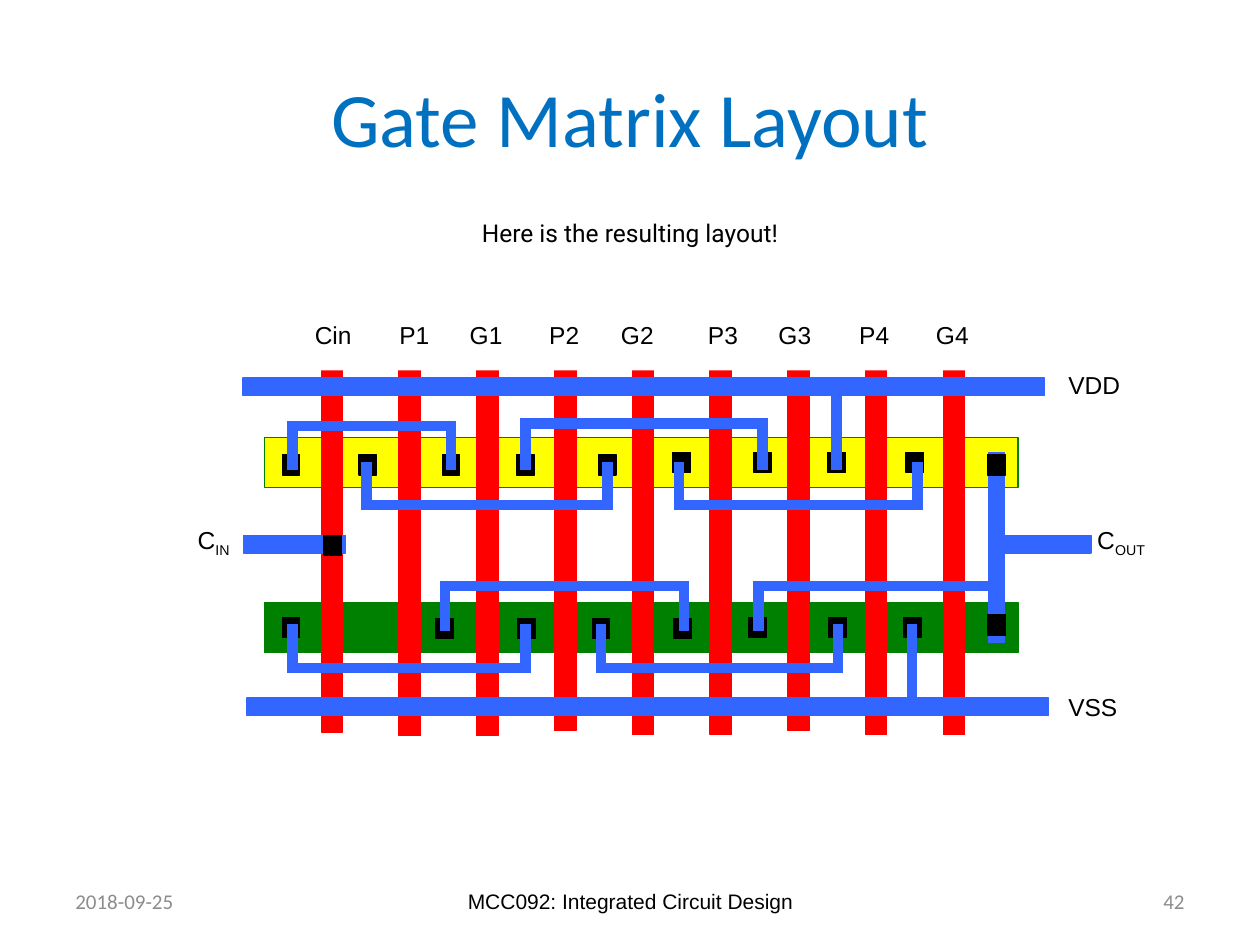
from lxml import etree
from pptx import Presentation
from pptx.dml.color import RGBColor
from pptx.enum import shapes, text
from pptx.oxml import ns
from pptx.util import Inches, Pt

BLACK = RGBColor(0x00, 0x00, 0x00)
WHITE = RGBColor(0xFF, 0xFF, 0xFF)
TITLE_BLUE = RGBColor(0x00, 0x70, 0xC0)
FOOTER_GREY = RGBColor(0x8C, 0x8C, 0x8C)
METAL_BLUE = RGBColor(0x33, 0x66, 0xFF)
POLY_RED = RGBColor(0xFF, 0x00, 0x00)
P_YELLOW = RGBColor(0xFF, 0xFF, 0x00)
N_GREEN = RGBColor(0x00, 0x80, 0x00)

LEFT, CENTER, RIGHT = (text.PP_ALIGN.LEFT, text.PP_ALIGN.CENTER,
                       text.PP_ALIGN.RIGHT)
TOP, MIDDLE = text.MSO_ANCHOR.TOP, text.MSO_ANCHOR.MIDDLE

# All circuit lengths are inches from the circuit's own top left corner.
GATE_NAMES = ["Cin", "P1", "G1", "P2", "G2", "P3", "G3", "P4", "G4"]
GATE_LEFT, GATE_PITCH = 1.05, 0.617
GATE_TOPS = [0.36, 0.39, 0.39, 0.35, 0.38, 0.38, 0.35, 0.38, 0.38]
NAME_TABS = [0.79, 1.36, 1.98, 2.56, 3.24, 3.81, 4.44, 5.06]
CONTACT_ROWS = [  # top, lefts
    (1.11, [0.74, 1.35, 2.01, 2.6, 3.25, 6.34]),
    (1.09, [3.84, 4.48, 5.07, 5.69]),
    (1.75, [1.07]),
    (2.4, [0.74, 4.44, 5.08, 5.67]),
    (2.41, [1.96, 2.61, 3.2, 3.85]),
    (2.38, [6.34]),
]
BRIDGES = [  # bar y, contact y, left and right end of each bar
    (0.88, 1.23, [(0.82, 2.08)]),
    (0.86, 1.23, [(2.67, 4.55)]),
    (1.51, 1.17, [(1.41, 3.32), (3.89, 5.78)]),
    (2.15, 2.51, [(2.03, 3.93), (4.52, 6.36)]),
    (2.8, 2.45, [(0.82, 2.67), (3.27, 5.15)]),
]
COUT_JOIN = 6.36
SUPPLY_TAPS = [(5.14, 0.63, 1.23), (5.74, 3.05, 2.45)]
HALF_WIRE = 0.04


def add_text(slide, box, content, size, font="Arial", color=BLACK, align=LEFT,
             anchor=TOP, subscript="", fill=None):
    shape = slide.shapes.add_textbox(*map(Inches, box))
    if fill is not None:
        shape.fill.solid()
        shape.fill.fore_color.rgb = fill
    frame = shape.text_frame
    frame.word_wrap = True
    frame.vertical_anchor = anchor
    paragraph = frame.paragraphs[0]
    paragraph.text = content
    paragraph.alignment = align
    if subscript:
        run = paragraph.add_run()
        run.text = subscript
        run.font._element.set("baseline", "-25000")
    for run in paragraph.runs:
        run.font.size = Pt(size)
        run.font.name = font
        run.font.color.rgb = color
    return paragraph


def add_center_tabs(paragraph, positions):
    tabs = etree.SubElement(paragraph._p.get_or_add_pPr(), ns.qn("a:tabLst"))
    for position in positions:
        etree.SubElement(tabs, ns.qn("a:tab"), pos=str(Inches(position)),
                         algn="ctr")


def add_block(slide, origin, box, fill, outline=None):
    left, top, width, height = box
    shape = slide.shapes.add_shape(
        shapes.MSO_SHAPE.RECTANGLE, Inches(origin[0] + left),
        Inches(origin[1] + top), Inches(width), Inches(height))
    shape.shadow.inherit = False
    shape.fill.solid()
    shape.fill.fore_color.rgb = fill
    shape.line.color.rgb = fill if outline is None else outline
    shape.line.width = Pt(0.75)


def add_wire(slide, origin, start, end):
    wire = slide.shapes.add_connector(
        shapes.MSO_CONNECTOR.STRAIGHT,
        Inches(origin[0] + start[0]), Inches(origin[1] + start[1]),
        Inches(origin[0] + end[0]), Inches(origin[1] + end[1]))
    wire.line.color.rgb = METAL_BLUE
    wire.line.width = Pt(6)
    etree.SubElement(wire._element.spPr, ns.qn("a:effectLst"))


def add_bridge(slide, origin, bar_y, contact_y, ends):
    """A bar with a leg down or up to a contact at each end."""
    outer_y = bar_y + (HALF_WIRE if contact_y < bar_y else -HALF_WIRE)
    for x in ends:
        if x != COUT_JOIN:
            add_wire(slide, origin, (x, outer_y), (x, contact_y))
    add_wire(slide, origin, (ends[0] - HALF_WIRE, bar_y),
             (ends[1] + HALF_WIRE, bar_y))


def add_labels(slide, origin):
    left, top = origin
    names = add_text(slide, (left + 0.9, top - 0.01, 6.54, 0.45),
                     "\t".join(GATE_NAMES), 14, fill=WHITE)
    add_center_tabs(names, NAME_TABS)
    for x, y, content, subscript in [(7.11, 1.62, "C", "OUT"),
                                     (6.88, 0.39, "VDD", ""),
                                     (6.88, 2.94, "VSS", ""),
                                     (-0.03, 1.62, "C", "IN")]:
        add_text(slide, (left + x, top + y, 0.79, 0.45), content, 14,
                 subscript=subscript)


def add_circuit(slide, origin):
    add_block(slide, origin, (0.6, 0.97, 5.98, 0.4), P_YELLOW, N_GREEN)
    add_block(slide, origin, (0.6, 2.28, 5.98, 0.4), N_GREEN)
    for index, top in enumerate(GATE_TOPS):
        gate_left = GATE_LEFT + index * GATE_PITCH
        add_block(slide, origin, (gate_left, top, 0.17, 2.95), POLY_RED)
    add_labels(slide, origin)
    for metal in [(0.43, 0.5, 6.36, 0.14), (0.46, 3.04, 6.36, 0.14),
                  (0.43, 1.75, 0.81, 0.14), (6.35, 1.75, 0.81, 0.14),
                  (6.35, 1.09, 0.12, 1.51)]:
        add_block(slide, origin, metal, METAL_BLUE)
    for top, lefts in CONTACT_ROWS:
        for left in lefts:
            add_block(slide, origin, (left, top, 0.14, 0.16), BLACK)
    for bar_y, contact_y, bars in BRIDGES:
        for ends in bars:
            add_bridge(slide, origin, bar_y, contact_y, ends)
    for x, rail_y, contact_y in SUPPLY_TAPS:
        add_wire(slide, origin, (x, rail_y), (x, contact_y))


def add_title(slide, box):
    title = slide.shapes.title
    title.left, title.top, title.width, title.height = map(Inches, box)
    title.text_frame.text = "Gate Matrix Layout"
    title.text_frame.vertical_anchor = MIDDLE
    paragraph = title.text_frame.paragraphs[0]
    paragraph.alignment = CENTER
    font = paragraph.runs[0].font
    font.size, font.name = Pt(44), "Calibri"
    font.color.rgb = TITLE_BLUE


def add_footer(slide, box):
    left, top, width, height = box
    side = 2.33
    add_text(slide, (left, top, side, height), "2018-09-25", 12, "Calibri",
             FOOTER_GREY, anchor=MIDDLE)
    add_text(slide, (left + 2.92, top, 3.17, height),
             "MCC092: Integrated Circuit Design", 12, align=CENTER,
             anchor=MIDDLE)
    add_text(slide, (left + width - side, top, side, height), "42", 12,
             "Calibri", FOOTER_GREY, RIGHT, MIDDLE)


def main():
    presentation = Presentation()
    presentation.slide_width, presentation.slide_height = Inches(10), Inches(7.5)
    slide = presentation.slides.add_slide(presentation.slide_layouts[5])
    add_title(slide, (0.5, 0.3, 9, 1.25))
    add_text(slide, (2.54, 1.68, 4.92, 0.66), "Here is the resulting layout!",
             14, "Roboto", align=CENTER)
    add_circuit(slide, (1.5, 2.5))
    add_footer(slide, (0.5, 6.95, 9, 0.4))
    presentation.save("out.pptx")


if __name__ == "__main__":
    main()
